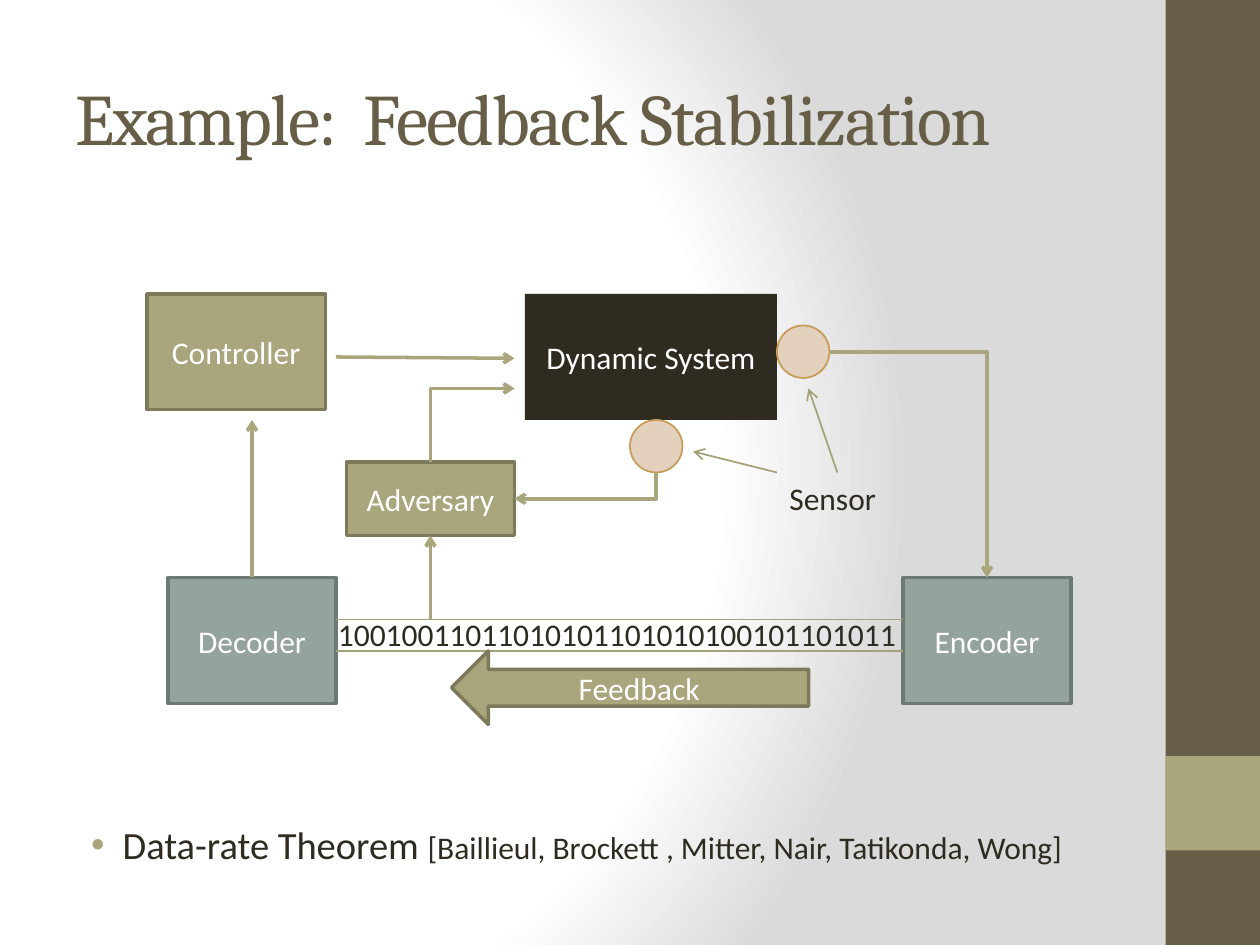
"""Build the feedback stabilization block diagram slide."""
from dataclasses import dataclass

from pptx import Presentation
from pptx.dml.color import RGBColor
from pptx.enum.shapes import MSO_CONNECTOR, MSO_SHAPE
from pptx.enum.text import MSO_ANCHOR, MSO_AUTO_SIZE, PP_ALIGN
from pptx.oxml import parse_xml
from pptx.oxml.ns import nsdecls, qn
from pptx.util import Pt

PX = 9525


@dataclass(frozen=True)
class Theme:
    """Colours, fonts and type sizes of the slide."""
    brown: str = "675E47"
    olive: str = "A9A57C"
    olive_edge: str = "7D7A5C"
    thin_olive: str = "A6A278"
    ink: str = "2F2B20"
    sage: str = "95A39D"
    sage_edge: str = "6E7974"
    sand: str = "E3D1BD"
    sand_edge: str = "C69C58"
    white: str = "FFFFFF"
    grey: str = "DADADA"
    heading_font: str = "Cambria"
    body_font: str = "Calibri"
    heading_size: float = 41.4
    bullet_size: float = 22
    label_size: float = 18
    heavy: float = 2
    light: float = 1


def px(*lengths):
    """Turn px lengths into EMU."""
    return [int(length * PX) for length in lengths]


def assign(target, values):
    """Set every attribute named in a dict of values."""
    for name, value in values.items():
        setattr(target, name, value)


class SlideBuilder:
    """Draws styled elements on one slide."""

    def __init__(self, slide, theme):
        """Keep the slide and its theme."""
        self.slide, self.theme = slide, theme

    def background(self):
        """Fill the slide with a radial fade from white to grey."""
        stops = ((0, self.theme.white), (75, self.theme.white), (100, self.theme.grey))
        stop_xml = "".join(
            f'<a:gs pos="{place * 1000}"><a:srgbClr val="{color}"/></a:gs>'
            for place, color in stops)
        self.slide.element.cSld.insert(0, parse_xml(
            f'<p:bg {nsdecls("p", "a")}><p:bgPr><a:gradFill rotWithShape="1">'
            f'<a:gsLst>{stop_xml}</a:gsLst><a:path path="circle">'
            '<a:fillToRect l="20000" t="50000" r="100000" b="50000"/></a:path>'
            '</a:gradFill><a:effectLst/></p:bgPr></p:bg>'))

    def run(self, paragraph, words, size, color, font=None):
        """Add a formatted run and return it."""
        run = paragraph.add_run()
        run.text = words
        assign(run.font, {"name": font or self.theme.body_font, "size": Pt(size)})
        run.font.color.rgb = RGBColor.from_string(color)
        return run

    def title(self, words, box):
        """Place and format the title placeholder."""
        heading = self.slide.shapes.title
        assign(heading, dict(zip(("left", "top", "width", "height"), px(*box))))
        assign(heading.text_frame, {"auto_size": MSO_AUTO_SIZE.NONE,
                                    "vertical_anchor": MSO_ANCHOR.MIDDLE})
        paragraph = heading.text_frame.paragraphs[0]
        paragraph.alignment = PP_ALIGN.LEFT
        run = self.run(paragraph, words, self.theme.heading_size,
                       self.theme.brown, self.theme.heading_font)
        run.font.element.set("spc", "-100") if hasattr(run.font, "element") else \
            run._r.get_or_add_rPr().set("spc", "-100")

    def block(self, box, fill, edge=None, words="", kind=MSO_SHAPE.RECTANGLE, weight=2):
        """Draw a filled shape with an optional outline and centred label."""
        block = self.slide.shapes.add_shape(kind, *px(*box))
        block.shadow.inherit = False
        block.fill.solid()
        block.fill.fore_color.rgb = RGBColor.from_string(fill)
        if edge:
            block.line.color.rgb = RGBColor.from_string(edge)
            block.line.width = Pt(weight)
        else:
            block.line.fill.background()
        if words:
            block.text_frame.vertical_anchor = MSO_ANCHOR.MIDDLE
            paragraph = block.text_frame.paragraphs[0]
            paragraph.alignment = PP_ALIGN.CENTER
            self.run(paragraph, words, self.theme.label_size, self.theme.white)

    def sensor(self, left, top):
        """Draw a round sensor."""
        self.block((left, top, 40, 40), self.theme.sand, self.theme.sand_edge,
                   kind=MSO_SHAPE.OVAL, weight=self.theme.light)

    def text(self, box, runs, wrap=False):
        """Add a text box and return its paragraph."""
        frame = self.slide.shapes.add_textbox(*px(*box)).text_frame
        frame.word_wrap = wrap
        paragraph = frame.paragraphs[0]
        for words, size in runs:
            self.run(paragraph, words, size, self.theme.ink)
        return paragraph

    def bullet(self, box, runs):
        """Add a bulleted line with a hanging indent."""
        properties = self.text(box, runs, wrap=True)._p.get_or_add_pPr()
        indent, hang = px(36, 24)
        properties.set("marL", str(indent))
        properties.set("indent", str(-hang))
        for tag in (f'<a:buClr {nsdecls("a")}><a:srgbClr val="{self.theme.olive}"/></a:buClr>',
                    f'<a:buFont {nsdecls("a")} typeface="Arial"/>',
                    f'<a:buChar {nsdecls("a")} char="•"/>'):
            properties.append(parse_xml(tag))

    def line(self, start, end, thin=False, arrow=True, kind=MSO_CONNECTOR.STRAIGHT):
        """Draw a connector and return it."""
        theme = self.theme
        line = self.slide.shapes.add_connector(kind, *px(*start, *end))
        line.line.color.rgb = RGBColor.from_string(theme.thin_olive if thin else theme.olive)
        line.line.width = Pt(theme.light if thin else theme.heavy)
        if arrow:
            line.line._get_or_add_ln().append(
                parse_xml(f'<a:tailEnd {nsdecls("a")} type="arrow"/>'))
        line._element.spPr.append(parse_xml(f'<a:effectLst {nsdecls("a")}/>'))
        return line

    def elbow(self, start, end, down_first=False):
        """Draw a one-corner arrow, turned a quarter when it starts vertically."""
        if down_first:
            (x1, y1), (x2, y2) = start, end
            middle_x, middle_y = (x1 + x2) / 2, (y1 + y2) / 2
            half_x, half_y = (x2 - x1) / 2, (y2 - y1) / 2
            start = (middle_x - half_y, middle_y + half_x)
            end = (middle_x + half_y, middle_y - half_x)
        properties = self.line(start, end, kind=MSO_CONNECTOR.ELBOW)._element.spPr
        properties.find(qn("a:prstGeom")).set("prst", "bentConnector2")
        if down_first:
            properties.find(qn("a:xfrm")).set("rot", "5400000")


def main():
    """Build and save the slide."""
    theme = Theme()
    deck = Presentation()
    deck.slide_width, deck.slide_height = px(960, 720)
    page = SlideBuilder(deck.slides.add_slide(deck.slide_layouts[5]), theme)

    page.background()
    page.block((888, 0, 72, 720), theme.brown)
    page.block((888, 576, 72, 72), theme.olive)
    page.title("Example:  Feedback Stabilization", (48, 29, 800, 120))
    page.bullet((48, 621, 800, 42), [
        ("Data-rate Theorem ", theme.bullet_size),
        ("[Baillieul, Brockett , Mitter, Nair, Tatikonda, Wong]", theme.label_size)])

    page.block((112, 224, 136, 88), theme.olive, theme.olive_edge, "Controller")
    page.block((400, 224, 192, 96), theme.ink, words="Dynamic System")
    page.sensor(592, 248)
    for left, words in ((688, "Encoder"), (128, "Decoder")):
        page.block((left, 440, 128, 96), theme.sage, theme.sage_edge, words)
    for channel_y in (472, 496):
        page.line((688, channel_y), (256, channel_y), thin=True, arrow=False)
    page.line((192, 440), (192, 320))
    page.line((256, 272), (392, 273))
    page.elbow((632, 268), (752, 440))
    page.text((248, 464, 455, 38),
              [("10010011011010101101010100101101011", theme.label_size)])
    page.text((592, 360, 92, 38), [("Sensor", theme.label_size)])
    page.line((638, 360), (616, 296), thin=True)

    page.sensor(480, 320)
    page.block((264, 352, 128, 56), theme.olive, theme.olive_edge, "Adversary")
    page.elbow((500, 360), (392, 380), down_first=True)
    page.line((592, 360), (528, 344), thin=True)
    page.elbow((328, 352), (392, 296), down_first=True)
    page.line((328, 472), (328, 408))
    page.block((344, 496, 272, 56), theme.olive, theme.olive_edge, "Feedback",
               MSO_SHAPE.LEFT_ARROW)
    deck.save("out.pptx")


if __name__ == "__main__":
    main()
